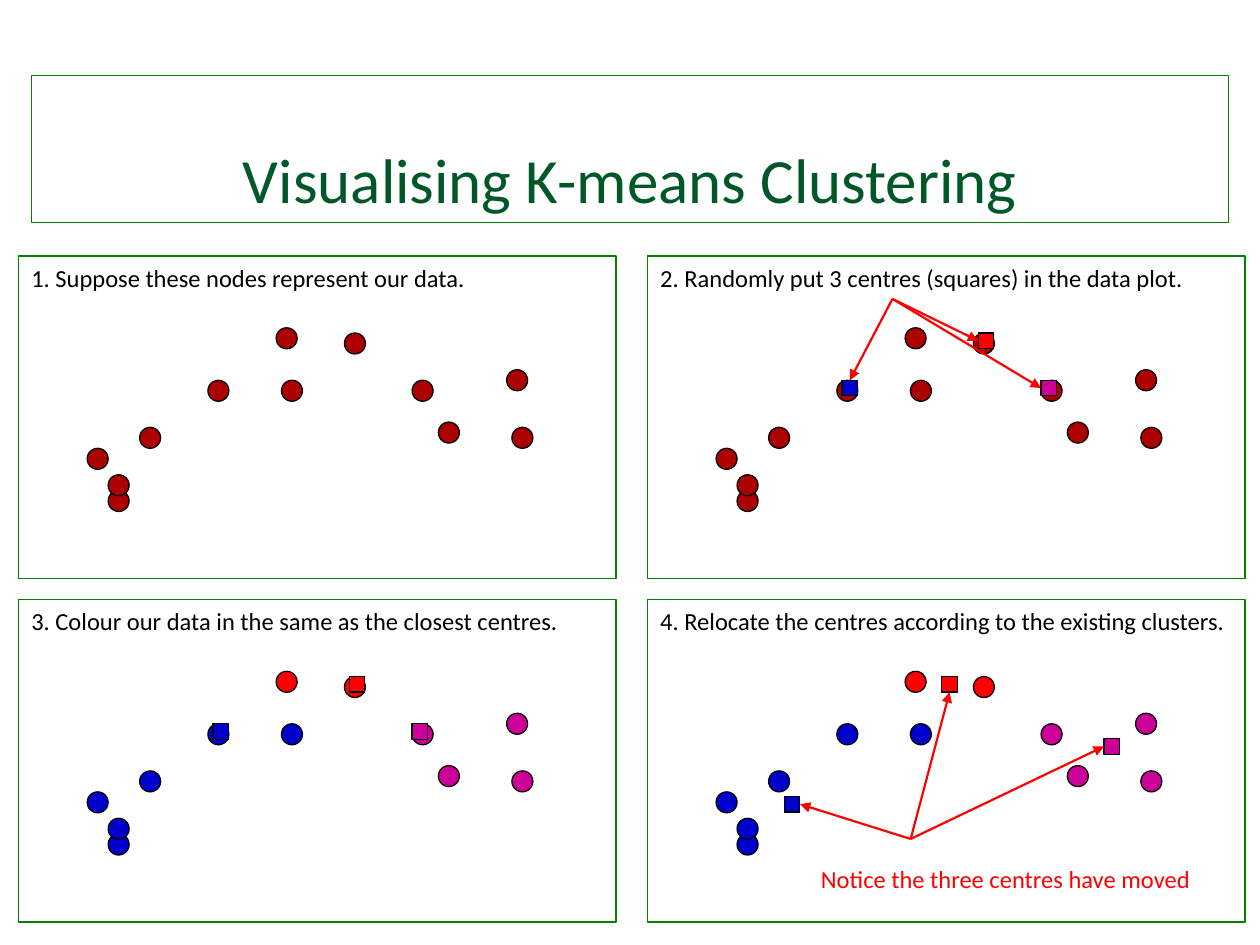
from pptx import Presentation
from pptx.dml.color import RGBColor
from pptx.enum.shapes import MSO_CONNECTOR, MSO_SHAPE
from pptx.enum.text import MSO_ANCHOR, PP_ALIGN
from pptx.oxml.ns import qn
from pptx.util import Pt
from lxml.etree import SubElement

COLOURS = {
    "title": "005828", "frame": "008200", "black": "000000", "data": "AD0101",
    "blue": "0000CC", "red": "FF0000", "magenta": "CC0099",
}
FONT = "Calibri"
NODE_SIZE, CENTRE_SIZE = 12, 8.9
PANEL_WIDTH, PANEL_HEIGHT = 341.3, 184.3
PANEL_LEFT, PANEL_TOP = 10.8, 146.3
COLUMN_STEP, ROW_STEP = 359.4, 196.3
TOP, LEFT, BOTTOM, RIGHT = range(4)

# Data nodes, in points from the panel corner, with the cluster each joins
NODES = [
    (51, 134, "blue"), (39, 109.9, "blue"), (69, 97.9, "blue"),
    (278.7, 65, "magenta"), (147, 41, "red"), (186, 44, "red"),
    (150, 71, "blue"), (108, 71, "blue"), (281.7, 97.9, "magenta"),
    (224.7, 71, "magenta"), (51, 125, "blue"), (239.7, 94.9, "magenta"),
]
FIRST_CENTRES = {"blue": (111, 71), "red": (188.8, 44), "magenta": (224.7, 71)}
MOVED_CENTRES = {"blue": (78, 112.5), "red": (168, 44), "magenta": (260.7, 79.5)}

# Caption, whether nodes take their cluster colour, centres, arrow start, arrow ends
PANELS = [
    ("1. Suppose these nodes represent our data.", False, {}, None, {}),
    ("2. Randomly put 3 centres (squares) in the data plot.", False, FIRST_CENTRES,
     (139.8, 24.5), {"blue": TOP, "red": LEFT, "magenta": LEFT}),
    ("3. Colour our data in the same as the closest centres.", True, FIRST_CENTRES,
     None, {}),
    ("4. Relocate the centres according to the existing clusters.", True, MOVED_CENTRES,
     (150.2, 136.8), {"blue": RIGHT, "red": BOTTOM, "magenta": LEFT}),
]


def colour(name):
    return RGBColor.from_string(COLOURS[name])


def add_outlined(shapes, kind, left, top, width, height, line, fill=None):
    shape = shapes.add_shape(kind, Pt(left), Pt(top), Pt(width), Pt(height))
    shape.shadow.inherit = False
    if fill:
        shape.fill.solid()
        shape.fill.fore_color.rgb = colour(fill)
    else:
        shape.fill.background()
    shape.line.color.rgb = colour(line)
    shape.line.width = Pt(0.75)
    return shape


def write_text(box, text, size, text_colour, anchor=MSO_ANCHOR.TOP, align=PP_ALIGN.LEFT):
    frame = box.text_frame
    frame.word_wrap = True
    frame.vertical_anchor = anchor
    para = frame.paragraphs[0]
    para.alignment = align
    span = para.add_run()
    span.text = text
    span.font.name = FONT
    span.font.size = Pt(size)
    span.font.color.rgb = colour(text_colour)


def add_label(page, left, top, width, height, text, text_colour, anchor=MSO_ANCHOR.TOP):
    box = page.shapes.add_textbox(Pt(left), Pt(top), Pt(width), Pt(height))
    write_text(box, text, 14, text_colour, anchor)


def add_arrow(page, left, top, target, side):
    arrow = page.shapes.add_connector(
        MSO_CONNECTOR.STRAIGHT, Pt(left), Pt(top), Pt(left), Pt(top))
    arrow.end_connect(target, side)
    arrow.line.color.rgb = colour("red")
    arrow.line.width = Pt(1.25)
    SubElement(arrow.line._get_or_add_ln(), qn("a:tailEnd"), type="triangle")
    SubElement(arrow._element.spPr, qn("a:effectLst"))


def add_title(page, left, top, width, height):
    box = add_outlined(page.shapes, MSO_SHAPE.RECTANGLE, left, top, width, height, "frame")
    write_text(box, "Visualising K-means Clustering", 36, "title",
               MSO_ANCHOR.BOTTOM, PP_ALIGN.CENTER)


def add_panel(page, left, top, width, height, caption, clustered, centres, start, ends):
    plot = page.shapes.add_group_shape().shapes
    # Data nodes
    for x, y, cluster in NODES:
        add_outlined(plot, MSO_SHAPE.OVAL, left + x, top + y, NODE_SIZE, NODE_SIZE,
                     "black", cluster if clustered else "data")
    # Cluster centres
    squares = {
        name: add_outlined(plot, MSO_SHAPE.RECTANGLE, left + x, top + y,
                           CENTRE_SIZE, CENTRE_SIZE, "black", name)
        for name, (x, y) in centres.items()
    }
    # Frame and caption
    add_outlined(plot, MSO_SHAPE.RECTANGLE, left, top, width, height, "frame")
    add_label(page, left, top + 0.4, width, 24.2, caption, "black")
    # Arrows to the centres
    for name, side in ends.items():
        add_arrow(page, left + start[0], top + start[1], squares[name], side)


def main():
    deck = Presentation()
    deck.slide_width, deck.slide_height = Pt(720), Pt(540)
    page = deck.slides.add_slide(deck.slide_layouts[6])

    add_title(page, 18, 43.2, 684, 84)
    for index, panel in enumerate(PANELS):
        row, column = divmod(index, 2)
        add_panel(page, PANEL_LEFT + column * COLUMN_STEP, PANEL_TOP + row * ROW_STEP,
                  PANEL_WIDTH, PANEL_HEIGHT, *panel)
    add_label(page, 462, 486, 237, 31.7, "Notice the three centres have moved", "red",
              MSO_ANCHOR.MIDDLE)
    deck.save("out.pptx")


if __name__ == "__main__":
    main()
